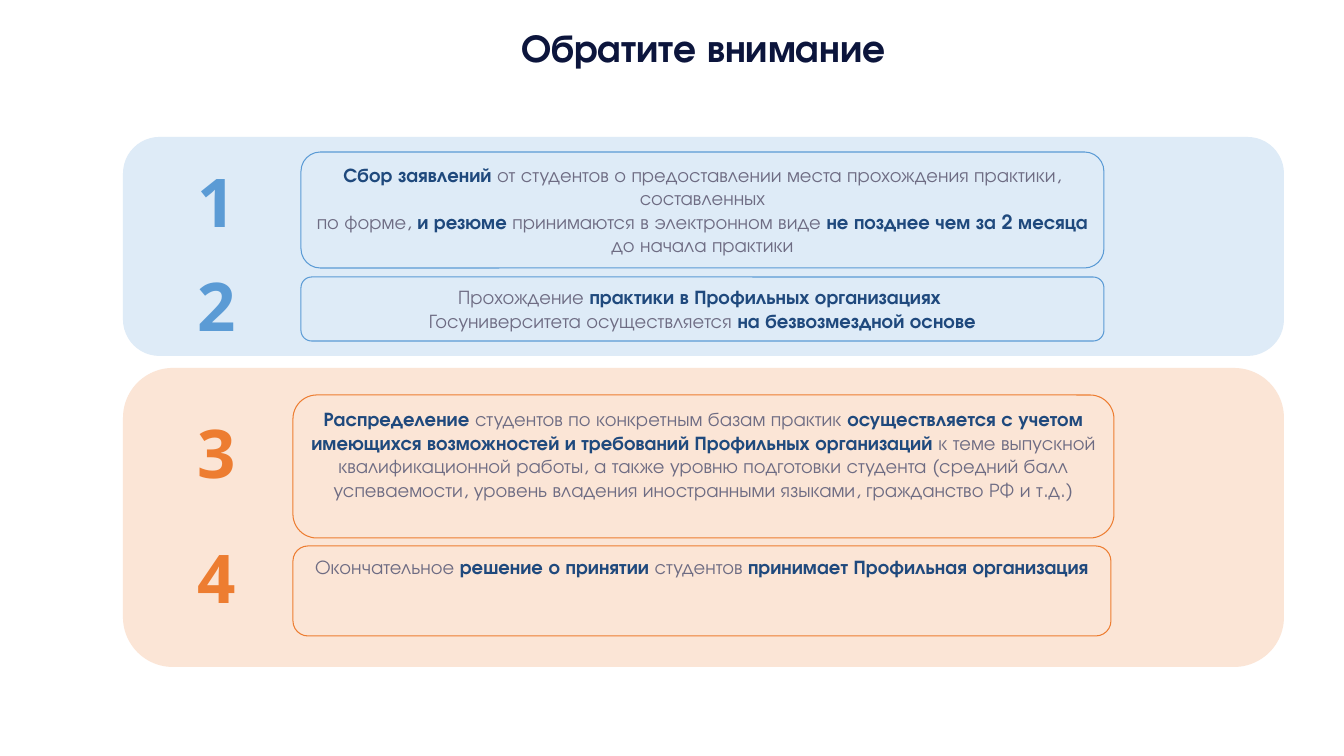
import pptx
import pptx.dml.color
import pptx.enum.shapes
import pptx.enum.text
import pptx.util

PX = 914400 / 100.8
TEXT_FONT = "TeX Gyre Adventor"
NUMBER_FONT = "Open Sans"
COLORS = {
    "title": "0C153C",
    "strong": "1F497D",
    "plain": "6E6C83",
    "blue": "5B9BD5",
    "light_blue": "DEEBF7",
    "orange": "ED7D31",
    "light_orange": "FBE5D6",
}

BLUE_ITEMS = [
    {
        "number": "1", "number_top": 18, "box": (178, 15, 803, 116),
        "lines": [
            [("Сбор заявлений ", True),
             ("от студентов о предоставлении места прохождения практики, составленных", False)],
            [("по форме, ", False), ("и резюме ", True),
             ("принимаются в электронном виде ", False),
             ("не позднее чем за 2 месяца ", True), ("до начала практики", False)],
        ],
    },
    {
        "number": "2", "number_top": 122, "box": (178, 140, 803, 64),
        "lines": [
            [("Прохождение ", False), ("практики в Профильных организациях ", True)],
            [("Госуниверситета осуществляется ", False), ("на безвозмездной основе", True)],
        ],
    },
]
ORANGE_ITEMS = [
    {
        "number": "3", "number_top": 38, "box": (170, 27, 821, 143),
        "lines": [
            [("Распределение ", True), ("студентов по конкретным базам практик ", False),
             ("осуществляется с учетом имеющихся возможностей и требований "
              "Профильных организаций ", True),
             ("к теме выпускной квалификационной работы, а также уровню подготовки студента "
              "(средний балл успеваемости, уровень владения иностранными языками, "
              "гражданство РФ и т.д.)", False)],
        ],
    },
    {
        "number": "4", "number_top": 163, "box": (170, 178, 818, 90),
        "lines": [
            [("Окончательное ", False), ("решение о принятии ", True),
             ("студентов ", False), ("принимает Профильная организация", True)],
        ],
    },
]


def px(length):
    """Turn a length in px into EMU."""
    return pptx.util.Emu(round(length * PX))


def color(name):
    """Look up a named colour."""
    return pptx.dml.color.RGBColor.from_string(COLORS[name])


def add_run(paragraph, text, size, font_name, color_name, bold):
    """Append a formatted run to a paragraph."""
    run = paragraph.add_run()
    run.text = text
    run.font.size = pptx.util.Pt(size)
    run.font.name = font_name
    run.font.bold = bold
    run.font.color.rgb = color(color_name)


def add_text_box(slide, box, text, size, font_name, color_name):
    """Add a wrapping text box with one bold line and return it."""
    text_box = slide.shapes.add_textbox(*map(px, box))
    text_box.text_frame.word_wrap = True
    add_run(text_box.text_frame.paragraphs[0], text, size, font_name, color_name, True)
    return text_box


def add_rounded_box(slide, box, fill=None, line=None):
    """Add a rounded rectangle with an optional fill and outline."""
    shape = slide.shapes.add_shape(
        pptx.enum.shapes.MSO_SHAPE.ROUNDED_RECTANGLE, *map(px, box))
    shape.shadow.inherit = False
    if fill:
        shape.fill.solid()
        shape.fill.fore_color.rgb = color(fill)
    else:
        shape.fill.background()
    if line:
        shape.line.color.rgb = color(line)
        shape.line.width = pptx.util.Pt(0.75)
    else:
        shape.line.fill.background()
    return shape


def add_title(slide, box):
    """Place the centred slide title in its box."""
    text_frame = add_text_box(
        slide, box, "Обратите внимание", 28, TEXT_FONT, "title").text_frame
    text_frame.margin_left = text_frame.margin_right = px(13)
    text_frame.margin_top = text_frame.margin_bottom = px(13)
    paragraph = text_frame.paragraphs[0]
    paragraph.alignment = pptx.enum.text.PP_ALIGN.CENTER
    paragraph.line_spacing = 0.9
    paragraph.space_before = pptx.util.Pt(7.5)


def add_item(slide, left, top, item, accent):
    """Place a numbered, outlined note relative to its panel corner."""
    box_left, box_top, width, height = item["box"]
    shape = add_rounded_box(
        slide, (left + box_left, top + box_top, width, height), line=accent)
    text_frame = shape.text_frame
    text_frame.word_wrap = True
    text_frame.vertical_anchor = pptx.enum.text.MSO_ANCHOR.TOP
    for index, line in enumerate(item["lines"]):
        paragraph = text_frame.add_paragraph() if index else text_frame.paragraphs[0]
        paragraph.alignment = pptx.enum.text.PP_ALIGN.CENTER
        for text, strong in line:
            add_run(paragraph, text, 14, TEXT_FONT, "strong" if strong else "plain", strong)
    add_text_box(slide, (left + 65, top + item["number_top"], 58, 92),
                 item["number"], 48, NUMBER_FONT, accent)


def add_panel(slide, box, items, fill, accent):
    """Place a tinted panel with its numbered notes."""
    add_rounded_box(slide, box, fill=fill)
    for item in items:
        add_item(slide, box[0], box[1], item, accent)


def main():
    """Build and save the slide."""
    presentation = pptx.Presentation()
    presentation.slide_width = px(1344)
    presentation.slide_height = px(756)
    slide = presentation.slides.add_slide(presentation.slide_layouts[6])
    add_title(slide, (247, 16, 913, 90))
    add_panel(slide, (123, 137, 1161, 219), BLUE_ITEMS, "light_blue", "blue")
    add_panel(slide, (123, 368, 1161, 299), ORANGE_ITEMS, "light_orange", "orange")
    presentation.save("out.pptx")


if __name__ == "__main__":
    main()
